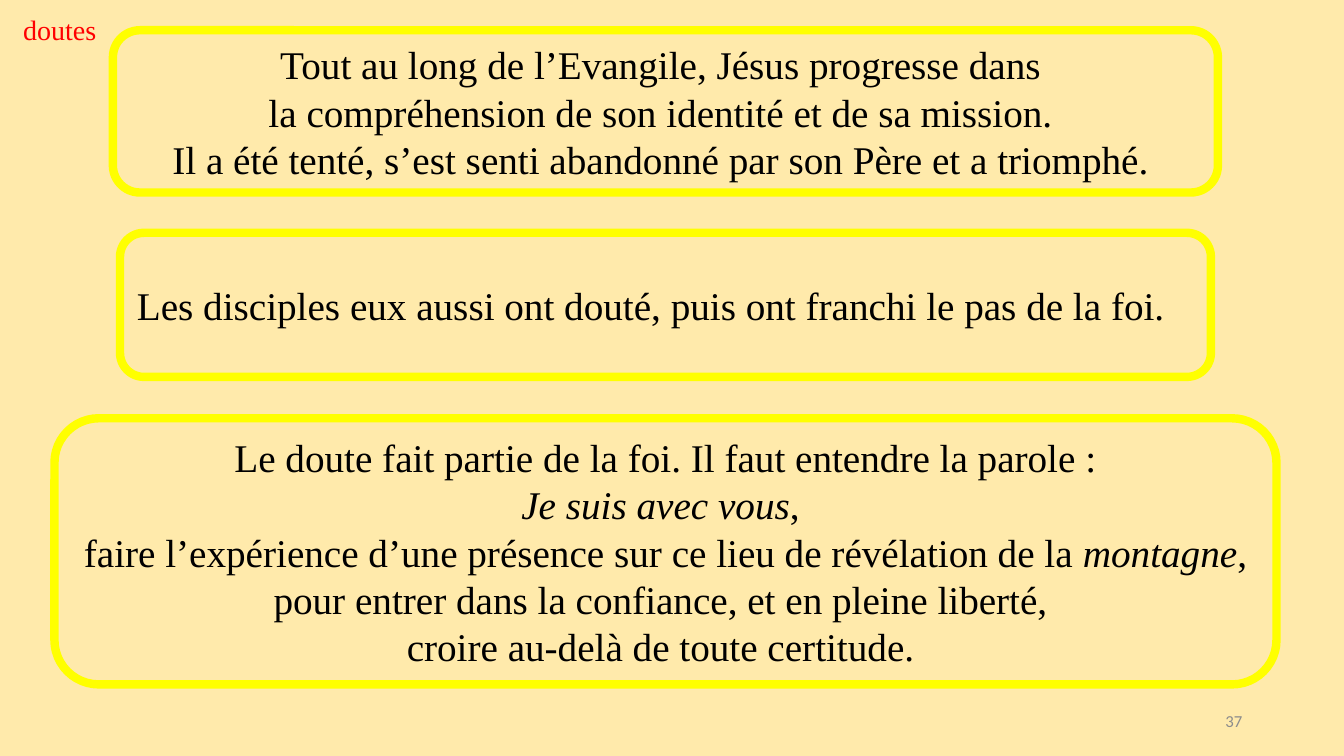
from pptx import Presentation
from pptx.dml.color import RGBColor
from pptx.enum.shapes import MSO_SHAPE
from pptx.enum.text import MSO_ANCHOR, PP_ALIGN
from pptx.util import Inches, Pt

SERIF = "Times New Roman"
BLACK, RED, GREY = "000000", "FF0000", "8C8C8C"
YELLOW, SAND = "FFFF00", "FFEAAB"

# Each line is a list of spans; odd-numbered spans are italic
JESUS = [
    ["Tout au long de l’Evangile, Jésus progresse dans "],
    ["la compréhension de son identité et de sa mission. "],
    ["Il a été tenté, s’est senti abandonné par son Père et a triomphé. "],
]
DISCIPLES = [["Les disciples eux aussi ont douté, puis ont franchi le pas de la foi."]]
DOUBT = [
    ["Le doute fait partie de la foi. Il faut entendre la parole :"],
    ["", "Je suis avec vous", ", "],
    ["faire l’expérience d’une présence sur ce lieu de révélation de la ",
     "montagne", ", pour entrer dans la confiance, et en pleine liberté, "],
    ["croire au-delà de toute certitude. "],
]


def colour(value):
    return RGBColor.from_string(value)


def write_lines(frame, lines, size, font, ink, align):
    frame.word_wrap = True
    for number, line in enumerate(lines):
        para = frame.add_paragraph() if number else frame.paragraphs[0]
        para.alignment = align
        for position, text in enumerate(line):
            if not text:
                continue
            span = para.add_run()
            span.text = text
            span.font.size = Pt(size)
            span.font.name = font
            span.font.italic = position % 2 == 1
            span.font.color.rgb = colour(ink)


def add_panel(slide, left, top, width, height, lines, align=PP_ALIGN.CENTER):
    panel = slide.shapes.add_shape(
        MSO_SHAPE.ROUNDED_RECTANGLE,
        Inches(left), Inches(top), Inches(width), Inches(height))
    panel.shadow.inherit = False
    panel.fill.background()
    panel.line.color.rgb = colour(YELLOW)
    panel.line.width = Pt(6)
    panel.text_frame.vertical_anchor = MSO_ANCHOR.MIDDLE
    write_lines(panel.text_frame, lines, 28, SERIF, BLACK, align)


def add_label(slide, left, top, width, height, text, size, font, ink, align, anchor):
    box = slide.shapes.add_textbox(
        Inches(left), Inches(top), Inches(width), Inches(height))
    box.text_frame.vertical_anchor = anchor
    write_lines(box.text_frame, [[text]], size, font, ink, align)


def main():
    deck = Presentation()
    deck.slide_width, deck.slide_height = Inches(13.33), Inches(7.5)
    slide = deck.slides.add_slide(deck.slide_layouts[6])
    slide.background.fill.solid()
    slide.background.fill.fore_color.rgb = colour(SAND)

    # Framed statements
    add_panel(slide, 1.12, 0.3, 10.96, 1.61, JESUS)
    add_panel(slide, 1.19, 2.31, 10.82, 1.43, DISCIPLES, PP_ALIGN.LEFT)
    add_panel(slide, 0.54, 4.15, 12.12, 2.64, DOUBT)

    # Slide number and topic
    add_label(slide, 9.42, 6.95, 3, 0.4, "37", 12, "Calibri", GREY,
              PP_ALIGN.RIGHT, MSO_ANCHOR.MIDDLE)
    add_label(slide, 0.13, 0.07, 0.98, 0.44, "doutes", 20, SERIF, RED,
              PP_ALIGN.LEFT, MSO_ANCHOR.TOP)

    deck.save("out.pptx")


if __name__ == "__main__":
    main()
